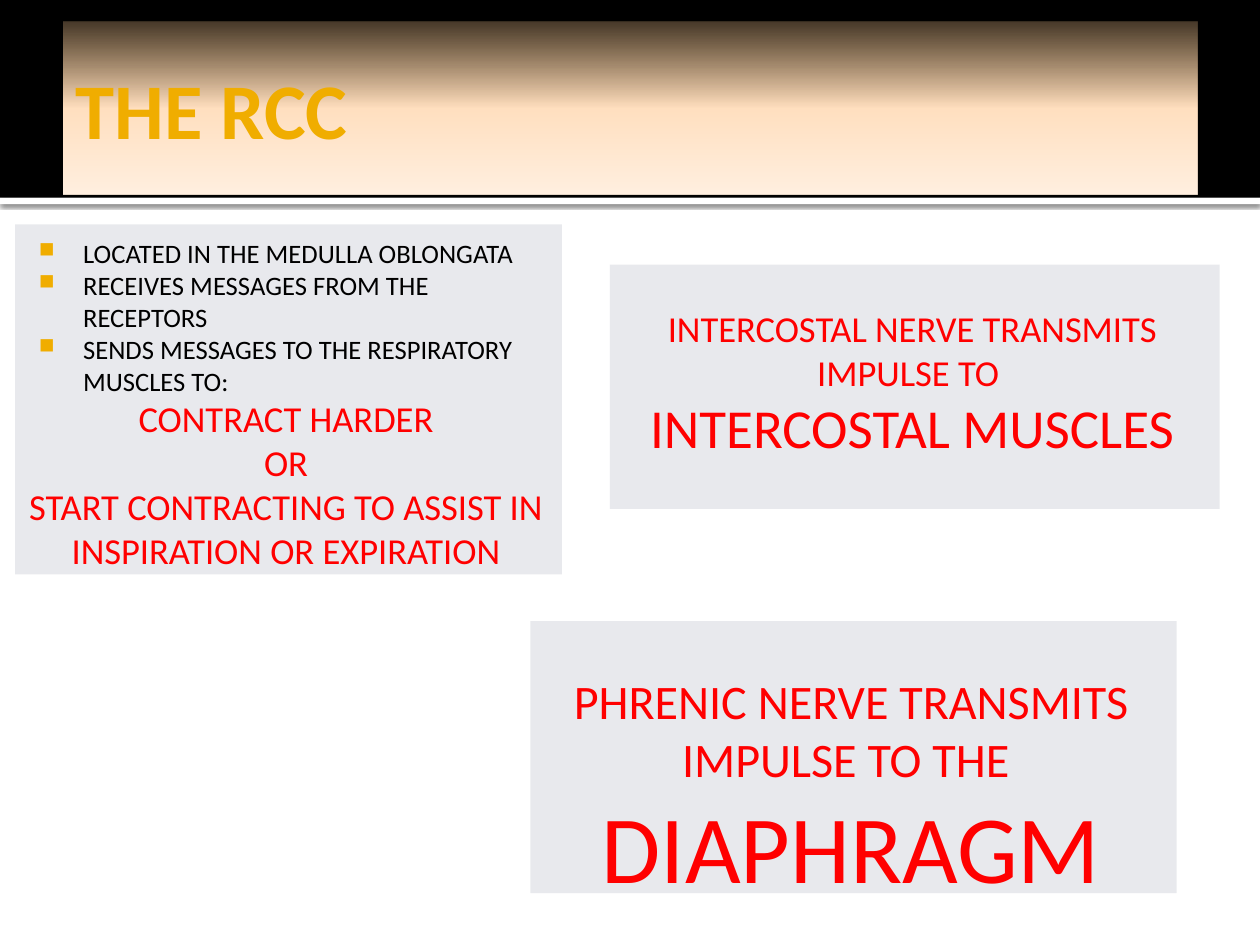
"""Build the slide on the RCC and the nerves that carry its impulses."""
from lxml import etree
from pptx import Presentation
from pptx import util as u
from pptx.dml.color import RGBColor
from pptx.enum import shapes, text
from pptx.oxml import parse_xml
from pptx.oxml.ns import nsdecls, qn

deck = Presentation()
deck.slide_width, deck.slide_height = u.Inches(10), u.Inches(7.5)
column, row = deck.slide_width / 100, deck.slide_height / 75
page = deck.slides.add_slide(deck.slide_layouts[5])
GOLD, RED, BLACK, PANEL = "F0AD00", "FF0000", "000000", "DDDFE5"


def colour(target, value):
    """Give a fill or font colour format a hex colour."""
    target.rgb = RGBColor.from_string(value)


def add_box(left, top, width, height, fill):
    """Add a plain filled rectangle measured in columns and rows."""
    box = page.shapes.add_shape(shapes.MSO_SHAPE.RECTANGLE, int(left * column),
                                int(top * row), int(width * column), int(height * row))
    box.shadow.inherit = False
    box.line.fill.background()
    box.fill.solid()
    colour(box.fill.fore_color, fill)
    return box


strip = add_box(0, 15.7, 100, 0.5, "FFFFFF")
strip.element.spPr.find(qn("a:effectLst")).append(parse_xml(
    f'<a:outerShdw {nsdecls("a")} blurRad="{u.Pt(2.5)}" dist="{u.Pt(0.8)}" dir="5400000">'
    f'<a:srgbClr val="{BLACK}"><a:alpha val="60000"/></a:srgbClr></a:outerShdw>'))
add_box(0, 0, 100, 15.7, BLACK)

title = page.shapes.title
title.element.getparent().append(title.element)
title_place = {"left": 5 * column, "top": 1.7 * row, "width": 90 * column, "height": 13.7 * row}
for name, value in title_place.items():
    setattr(title, name, int(value))
stops = "".join(
    f'<a:gs pos="{share * 1000}"><a:srgbClr val="{value}">'
    f'<a:alpha val="{alpha * 1000}"/></a:srgbClr></a:gs>'
    for share, value, alpha in [(0, "FFCF96", 27), (50, "FFDFBF", 100), (100, "FFEFE0", 100)])
title.element.spPr.append(parse_xml(
    f'<a:gradFill {nsdecls("a")} rotWithShape="1"><a:gsLst>{stops}</a:gsLst>'
    f'<a:lin ang="5400000" scaled="0"/></a:gradFill>'))
title_frame = {
    "text": "THE RCC", "word_wrap": True, "auto_size": text.MSO_AUTO_SIZE.NONE,
    "vertical_anchor": text.MSO_ANCHOR.MIDDLE, "margin_left": u.Inches(0.1),
    "margin_right": u.Inches(0.05), "margin_top": u.Inches(0.05), "margin_bottom": u.Inches(0.05)}
for name, value in title_frame.items():
    setattr(title.text_frame, name, value)
para = title.text_frame.paragraphs[0]
para.alignment = text.PP_ALIGN.LEFT
for name, value in {"name": "Calibri", "size": u.Pt(45), "bold": True}.items():
    setattr(para.runs[0].font, name, value)
colour(para.runs[0].font.color, GOLD)

panels = [
    ((1.2, 17.8, 43.4, 27.8), 0.1, [
        ("LOCATED IN THE MEDULLA OBLONGATA", 15.2, True),
        ("RECEIVES MESSAGES FROM THE RECEPTORS", 15.2, True),
        ("SENDS MESSAGES TO THE RESPIRATORY MUSCLES TO:", 15.2, True),
        ("CONTRACT HARDER", 20.9, False),
        ("OR", 20.9, False),
        ("START CONTRACTING TO ASSIST IN INSPIRATION OR EXPIRATION", 20.9, False)]),
    ((48.4, 21, 48.4, 19.4), 0.33, [
        ("INTERCOSTAL NERVE TRANSMITS IMPULSE TO ", 20.9, False),
        ("INTERCOSTAL MUSCLES", 31.4, False)]),
    ((42.1, 49.3, 51.3, 21.6), 0.4, [
        ("PHRENIC NERVE TRANSMITS IMPULSE TO THE ", 27.5, False),
        ("DIAPHRAGM", 55, False)]),
]
for place, top_margin, lines in panels:
    box = add_box(*place, PANEL)
    tint = box.element.spPr.find(qn("a:solidFill"))[0]
    etree.SubElement(tint, qn("a:alpha"), val="66000")
    frame = box.text_frame
    frame_format = {
        "word_wrap": True, "vertical_anchor": text.MSO_ANCHOR.TOP,
        "margin_left": u.Inches(0.06), "margin_right": u.Inches(0.1),
        "margin_top": u.Inches(top_margin), "margin_bottom": u.Inches(0.05)}
    for name, value in frame_format.items():
        setattr(frame, name, value)
    for index, (wording, size, bulleted) in enumerate(lines):
        para = frame.add_paragraph() if index else frame.paragraphs[0]
        para.alignment = text.PP_ALIGN.LEFT if bulleted else text.PP_ALIGN.CENTER
        if bulleted:
            settings = para._p.get_or_add_pPr()
            settings.set("marL", str(u.Inches(0.48)))
            settings.set("indent", str(u.Inches(-0.35)))
            bullet_colour = etree.SubElement(settings, qn("a:buClr"))
            etree.SubElement(bullet_colour, qn("a:srgbClr"), val=GOLD)
            etree.SubElement(settings, qn("a:buSzPct"), val="80000")
            etree.SubElement(settings, qn("a:buChar"), char="■")
        span = para.add_run()
        span.text = wording
        for name, value in {"name": "Calibri", "size": u.Pt(size)}.items():
            setattr(span.font, name, value)
        colour(span.font.color, BLACK if bulleted else RED)

deck.save("out.pptx")
